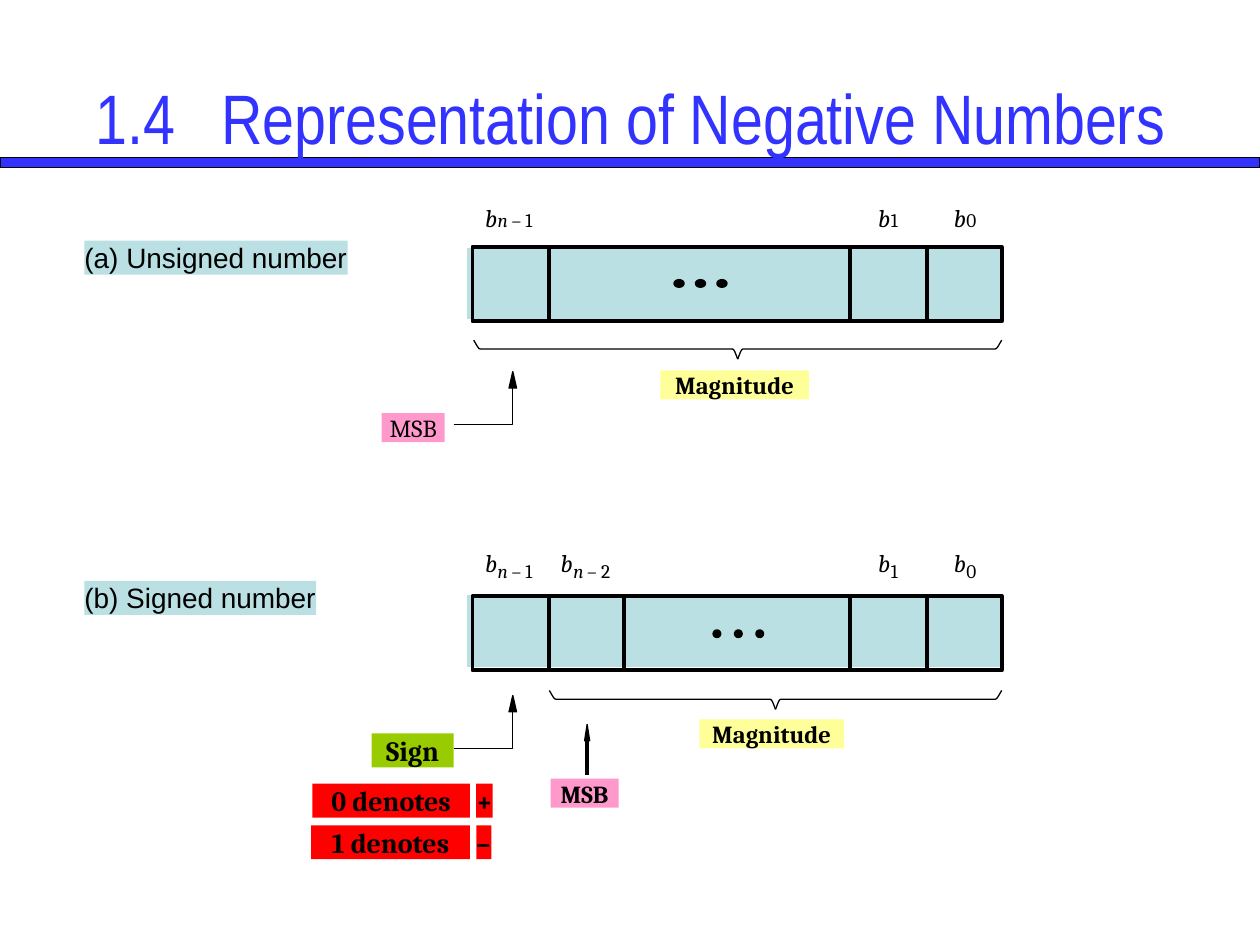
from pptx import Presentation
from pptx.dml.color import RGBColor
from pptx.enum.shapes import MSO_CONNECTOR, MSO_SHAPE
from pptx.enum.text import MSO_ANCHOR, MSO_AUTO_SIZE, PP_ALIGN
from pptx.oxml.ns import qn
from pptx.util import Pt
from lxml import etree

RECT, OVAL = MSO_SHAPE.RECTANGLE, MSO_SHAPE.OVAL
STRAIGHT = MSO_CONNECTOR.STRAIGHT
TOP, MIDDLE = MSO_ANCHOR.TOP, MSO_ANCHOR.MIDDLE
LEFT, CENTER = PP_ALIGN.LEFT, PP_ALIGN.CENTER
FIT = MSO_AUTO_SIZE.SHAPE_TO_FIT_TEXT
EMU_PER_PX = 9144
BLACK, WHITE, BLUE = "000000", "FFFFFF", "3333FF"
PALE, YELLOW, PINK, GREEN, RED = "BBE0E3", "FFFF99", "FF99CC", "99CC00", "FF0000"
SERIF, SANS, NARROW = "Cambria", "Arial", "Arial Narrow"


def px(*lengths):
    return [round(length * EMU_PER_PX) for length in lengths]


def paint(target, color):
    target.solid()
    target.fore_color.rgb = RGBColor.from_string(color)


def style(shape, fill=None, line=None, width=0):
    shape.shadow.inherit = False
    if fill:
        paint(shape.fill, fill)
    else:
        shape.fill.background()
    if line:
        paint(shape.line.fill, line)
        shape.line.width = Pt(width)
    else:
        shape.line.fill.background()


def block(slide, kind, box, fill=None, line=None, width=0):
    shape = slide.shapes.add_shape(kind, *px(*box))
    style(shape, fill, line, width)
    return shape


def write(shape, text, size, font=SERIF, color=BLACK, bold=False, italic=False,
          align=LEFT):
    paragraph = shape.text_frame.paragraphs[0]
    paragraph.alignment = align
    run = paragraph.add_run()
    run.text = text
    run.font.size, run.font.name = Pt(size), font
    run.font.bold, run.font.italic = bold, italic
    paint(run.font.fill, color)


def hug(shape, wrap):
    frame = shape.text_frame
    frame.margin_left = frame.margin_top = frame.margin_right = frame.margin_bottom = 0
    frame.vertical_anchor = TOP
    frame.word_wrap = wrap
    frame.auto_size = FIT


def tag(slide, box, fill, text, size, wrap=True, font=SERIF, bold=True):
    shape = block(slide, RECT, box, fill)
    hug(shape, wrap)
    write(shape, text, size, font, bold=bold, align=CENTER if wrap else LEFT)


def outline(slide, points, closed=False, fill=None):
    start, *rest = [px(*point) for point in points]
    builder = slide.shapes.build_freeform(*start)
    builder.add_line_segments(rest, close=closed)
    style(builder.convert_to_shape(), fill, BLACK)


def bend(start, control, end, steps=6):
    for step in range(steps + 1):
        t = step / steps
        yield tuple((1 - t) ** 3 * a + 3 * t * (1 - t) * c + t ** 3 * b
                    for a, c, b in zip(start, control, end))


def brace(slide, left, top, width):
    half = width / 2
    profile = [*bend((0, 0), (4, 7), (6, 7)),
               *bend((half - 5, 7), (half - 3, 7), (half, 15))]
    for end, direction in ((left, 1), (left + width, -1)):
        outline(slide, [(end + direction * x, top + y) for x, y in profile])


def arrowhead(slide, tip_x, tip_y, half_width):
    base = tip_y + 13
    outline(slide, [(tip_x - half_width, base), (tip_x, tip_y),
                    (tip_x + half_width, base)], True, BLACK)


def elbow_arrow(slide, left, top):
    outline(slide, [(left, top + 42), (left + 47, top + 42), (left + 47, top + 13)])
    arrowhead(slide, left + 47, top, 3)


def up_arrow(slide, x, top, length):
    stem = slide.shapes.add_connector(STRAIGHT, *px(x, top + length, x, top + 13))
    paint(stem.line.fill, BLACK)
    stem.line.width = Pt(0)
    etree.SubElement(stem._element.spPr, qn("a:effectLst"))
    arrowhead(slide, x, top, 2)


def bit_label(slide, left, top, subscript, drop):
    glyphs = [(0, 0, 11, 23, "b", 14)]
    glyphs += [(10 + 11 * i, drop, 9, 18, mark, 11) for i, mark in enumerate(subscript)]
    for x, y, width, height, mark, size in glyphs:
        glyph = slide.shapes.add_textbox(*px(left + x, top + y, width, height))
        hug(glyph, False)
        write(glyph, mark, size, italic=mark in "bn")


def register(slide, left, top, band_rise, cell_widths, dots, dot_size):
    block(slide, RECT, (left - 5, top - band_rise, 425, 58), PALE, WHITE, 0.75)
    cell_left = left
    for width in cell_widths:
        block(slide, RECT, (cell_left, top, width, 59), None, BLACK, 2.25)
        cell_left += width
    dot_x, dot_y = dots
    for i in range(3):
        block(slide, OVAL, (left + dot_x + 17 * i, top + dot_y, *dot_size),
              BLACK, BLACK, 2.25)


def header(slide, left, top, width):
    block(slide, RECT, (left, top + 125, width, 8), BLUE, BLACK, 0.75)
    title = slide.shapes.add_textbox(*px(left + 50, top + 30, width - 100, 125))
    title.text_frame.word_wrap = True
    title.text_frame.vertical_anchor = MIDDLE
    write(title, "1.4\tRepresentation of Negative Numbers", 40, NARROW, BLUE,
          align=CENTER)


def unsigned_number(slide, left, top):
    register(slide, left + 308, top + 35, 0, (61, 239, 61, 59), (161, 27), (6, 4))
    for x, subscript in ((318, "n–1"), (630, "1"), (690, "0")):
        bit_label(slide, left + x, top, subscript, 4)
    tag(slide, (left, top + 30, 209, 27), PALE, "(a) Unsigned number", 16,
        False, SANS, False)
    brace(slide, left + 309, top + 109, 419)
    tag(slide, (left + 457, top + 133, 118, 23), YELLOW, "Magnitude", 14)
    elbow_arrow(slide, left + 293, top + 134)
    tag(slide, (left + 236, top + 167, 50, 23), PINK, "MSB", 14, bold=False)


def signed_number(slide, left, top):
    register(slide, left + 308, top + 38, 1, (61, 59, 180, 61, 59), (192, 28), (4, 4))
    for x, subscript in ((318, "n–1"), (378, "n–2"), (630, "1"), (690, "0")):
        bit_label(slide, left + x, top, subscript, 9)
    tag(slide, (left, top + 26, 184, 27), PALE, "(b) Signed number", 16,
        False, SANS, False)
    brace(slide, left + 369, top + 113, 359)
    tag(slide, (left + 488, top + 136, 115, 23), YELLOW, "Magnitude", 14)
    elbow_arrow(slide, left + 293, top + 117)
    tag(slide, (left + 228, top + 147, 65, 27), GREEN, "Sign", 16)
    up_arrow(slide, left + 399, top + 140, 40)
    tag(slide, (left + 370, top + 183, 54, 23), PINK, "MSB", 14)
    for row, (meaning, sign) in enumerate((("0 denotes", "+"), ("1 denotes", "–"))):
        y = top + 187 + 33 * row
        tag(slide, (left + 181 - row, y, 125 + row, 27), RED, meaning, 16)
        tag(slide, (left + 311, y, 13 - row, 27), RED, sign, 16, False)


def main():
    deck = Presentation()
    deck.slide_width, deck.slide_height = px(1000, 750)
    slide = deck.slides.add_slide(deck.slide_layouts[6])
    header(slide, 0, 0, 1000)
    unsigned_number(slide, 67, 161)
    signed_number(slide, 67, 435)
    deck.save("out.pptx")


if __name__ == "__main__":
    main()
